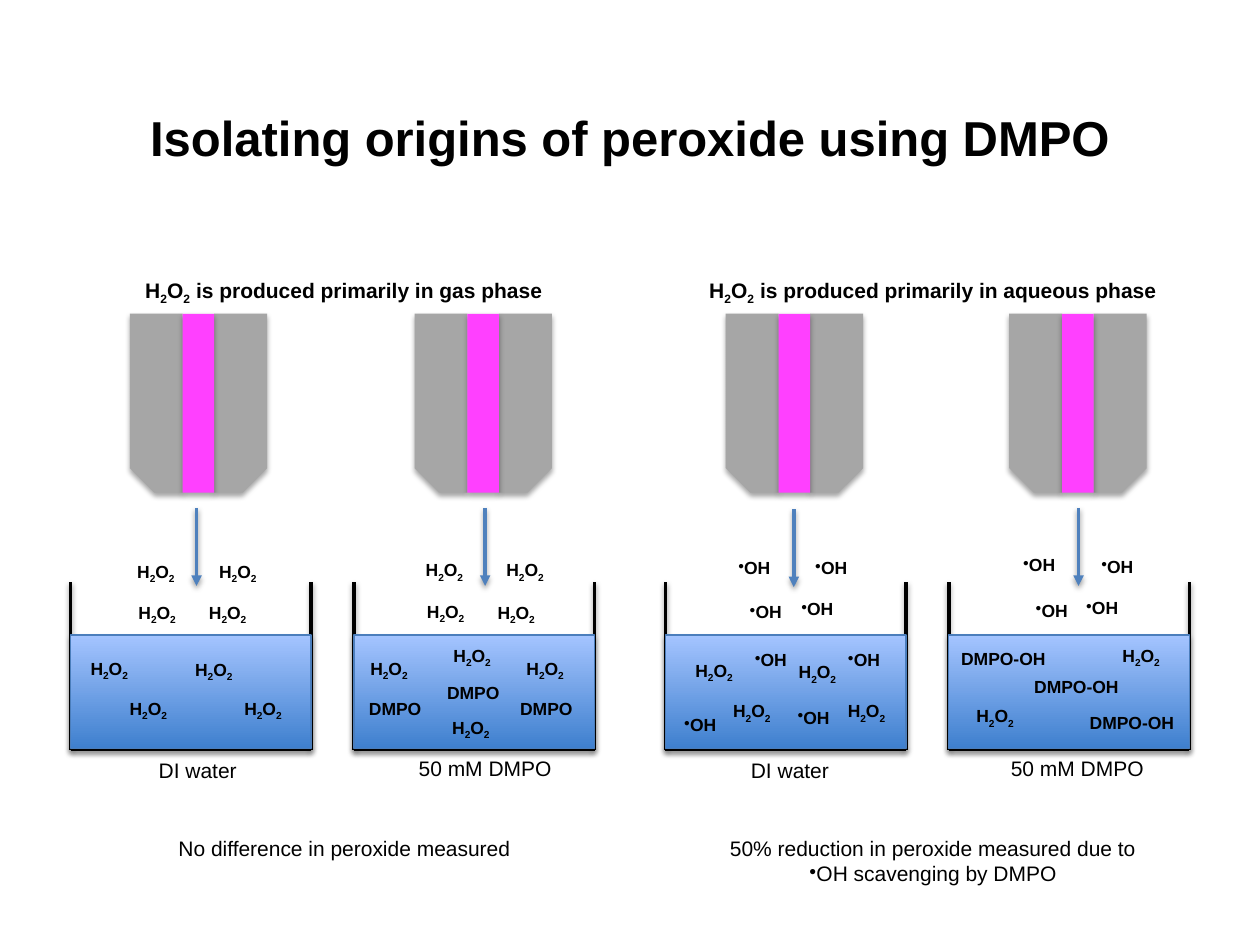
"""Build the slide on isolating the origins of peroxide with DMPO."""
from lxml import etree
from pptx import Presentation, util as u
from pptx.dml.color import RGBColor
from pptx.enum import shapes, text
from pptx.oxml.ns import qn

Inches = u.Inches
COLORS = {"black": "000000", "arrow": "4F81BD", "nozzle": "A6A6A6", "plasma": "FF40FF",
          "deep": "3F80CE", "surface": "A4C4FF", "edge": "4B7EBC"}
RGB = {name: RGBColor.from_string(value) for name, value in COLORS.items()}
BASELINES = {"2": "-25000", "●": "30000"}
PEROXIDE = "H|2|O|2"
RADICAL = "●|OH"
WIDTHS = {PEROXIDE: 0.52, RADICAL: 0.47, "DMPO": 0.62, "DMPO-OH": 0.88}


def add_shadow(sp, alpha, distance):
    """Give a shape or connector a soft shadow falling straight down."""
    spPr = sp._element.spPr
    for old in spPr.findall(qn("a:effectLst")):
        spPr.remove(old)
    effects = etree.SubElement(spPr, qn("a:effectLst"))
    shadow = etree.SubElement(effects, qn("a:outerShdw"), blurRad=str(u.Pt(3.1)),
                              dist=str(u.Pt(distance)), dir="5400000", rotWithShape="0")
    color = etree.SubElement(shadow, qn("a:srgbClr"), val=COLORS["black"])
    etree.SubElement(color, qn("a:alpha"), val=str(alpha * 1000))


def add_label(content, left, top, width, height, size, bold=False, wrap=True):
    """Add a text box whose runs are parted by bars."""
    sp = s.shapes.add_textbox(Inches(left), Inches(top), Inches(width), Inches(height))
    tf = sp.text_frame
    tf.word_wrap = wrap
    tf.auto_size = text.MSO_AUTO_SIZE.SHAPE_TO_FIT_TEXT
    p = tf.paragraphs[0]
    p.alignment = text.PP_ALIGN.CENTER if wrap else text.PP_ALIGN.LEFT
    p.font.size, p.font.bold, p.font.name = u.Pt(size), bold, "Arial"
    p.font.color.rgb = RGB["black"]
    for part in content.split("|"):
        r = p.add_run()
        r.text = part
        if part in BASELINES:
            r._r.get_or_add_rPr().set("baseline", BASELINES[part])


prs = Presentation()
prs.slide_width, prs.slide_height = Inches(10), Inches(7.5)
s = prs.slides.add_slide(prs.slide_layouts[5])

title = s.shapes.title
title.left, title.top, title.width, title.height = [Inches(v) for v in (0.5, 0.5, 9, 1.17)]
title.text_frame.text = "Isolating origins of peroxide using DMPO"
title.text_frame.vertical_anchor = text.MSO_ANCHOR.MIDDLE
p = title.text_frame.paragraphs[0]
p.alignment = text.PP_ALIGN.CENTER
p.font.size, p.font.bold, p.font.name = u.Pt(28), True, "Arial"
p.font.color.rgb = RGB["black"]

for left in (1.03, 3.29, 5.76, 8.01):
    for offset, width, color in ((0, 0.42, "nozzle"), (0.67, 0.42, "nozzle"), (0.42, 0.25, "plasma")):
        kind = shapes.MSO_SHAPE.RECTANGLE
        if color == "nozzle":
            kind = shapes.MSO_SHAPE.SNIP_ROUND_RECTANGLE
        sp = s.shapes.add_shape(kind, Inches(left + offset), Inches(2.49), Inches(width), Inches(1.42))
        if color == "nozzle":
            sp.adjustments[0], sp.adjustments[1] = 0, 0.463
            sp.rotation = 180
            if offset:
                sp._element.spPr.xfrm.set("flipH", "1")
        sp.fill.solid()
        sp.fill.fore_color.rgb = RGB[color]
        sp.line.fill.background()
        add_shadow(sp, 35, 1.8)

beaker_width, rim, base = 1.91, 4.62, 5.95
for left in (0.56, 2.81, 5.28, 7.53):
    right = left + beaker_width
    for x1, y1, x2, y2 in ((left, rim, left, base), (right, rim, right, base), (left, base, right, base)):
        sp = s.shapes.add_connector(shapes.MSO_CONNECTOR.STRAIGHT,
                                    Inches(x1), Inches(y1), Inches(x2), Inches(y2))
        sp.line.color.rgb = RGB["black"]
        sp.line.width = u.Pt(2)
        add_shadow(sp, 38, 1.6)
    sp = s.shapes.add_shape(shapes.MSO_SHAPE.RECTANGLE, Inches(left), Inches(5.04),
                            Inches(beaker_width), Inches(0.9))
    sp.fill.gradient()
    sp.fill.gradient_angle = 90
    for stop, color in zip(sp.fill.gradient_stops, ("deep", "surface")):
        stop.color.rgb = RGB[color]
    sp.line.color.rgb = RGB["edge"]
    sp.line.width = u.Pt(0.75)
    add_shadow(sp, 35, 1.8)

for x, top in ((1.56, 4.03), (3.85, 4.03), (6.3, 4.04), (8.56, 4.03)):
    sp = s.shapes.add_connector(shapes.MSO_CONNECTOR.STRAIGHT,
                                Inches(x), Inches(top), Inches(x), Inches(top + 0.62))
    sp.line.color.rgb = RGB["arrow"]
    sp.line.width = u.Pt(2)
    etree.SubElement(sp.line._get_or_add_ln(), qn("a:tailEnd"), type="triangle")
    add_shadow(sp, 38, 1.6)

species = {
    PEROXIDE: ((0.99, 4.4), (1.64, 4.4), (1, 4.73), (1.56, 4.73),
               (0.62, 5.17), (1.45, 5.18), (0.93, 5.49), (1.84, 5.49),
               (3.28, 4.39), (3.92, 4.39), (3.29, 4.72), (3.85, 4.73),
               (2.84, 5.17), (3.5, 5.07), (4.08, 5.17), (3.49, 5.64),
               (5.42, 5.19), (6.24, 5.2), (5.72, 5.51), (6.63, 5.51),
               (8.81, 5.07), (7.65, 5.55)),
    RADICAL: ((5.76, 4.37), (6.37, 4.37), (5.85, 4.72), (6.26, 4.7),
              (5.89, 5.1), (6.63, 5.1), (5.33, 5.62), (6.23, 5.56),
              (8.02, 4.35), (8.64, 4.36), (8.12, 4.71), (8.52, 4.69)),
    "DMPO": ((3.45, 5.36), (2.83, 5.49), (4.03, 5.49)),
    "DMPO-OH": ((7.53, 5.09), (8.11, 5.32), (8.55, 5.6)),
}
for name, spots in species.items():
    for left, top in spots:
        add_label(name, left, top, WIDTHS[name], 0.27, 10, bold=True, wrap=False)

add_label(PEROXIDE + "| is produced primarily in gas phase", 1.03, 2.15, 3.4, 0.3, 12, bold=True)
add_label(PEROXIDE + "| is produced primarily in aqueous phase", 5.5, 2.15, 3.81, 0.3, 12, bold=True)
for left in (1.1, 5.8):
    add_label("DI water", left, 5.96, 0.94, 0.3, 12)
for left in (3.19, 7.89):
    add_label("50 mM DMPO", left, 5.95, 1.32, 0.3, 12)
add_label("No difference in peroxide measured", 0.86, 6.58, 3.75, 0.3, 12)
add_label("50% reduction in peroxide measured due to |●|OH scavenging by DMPO", 5.53, 6.58, 3.75, 0.5, 12)

prs.save("out.pptx")
